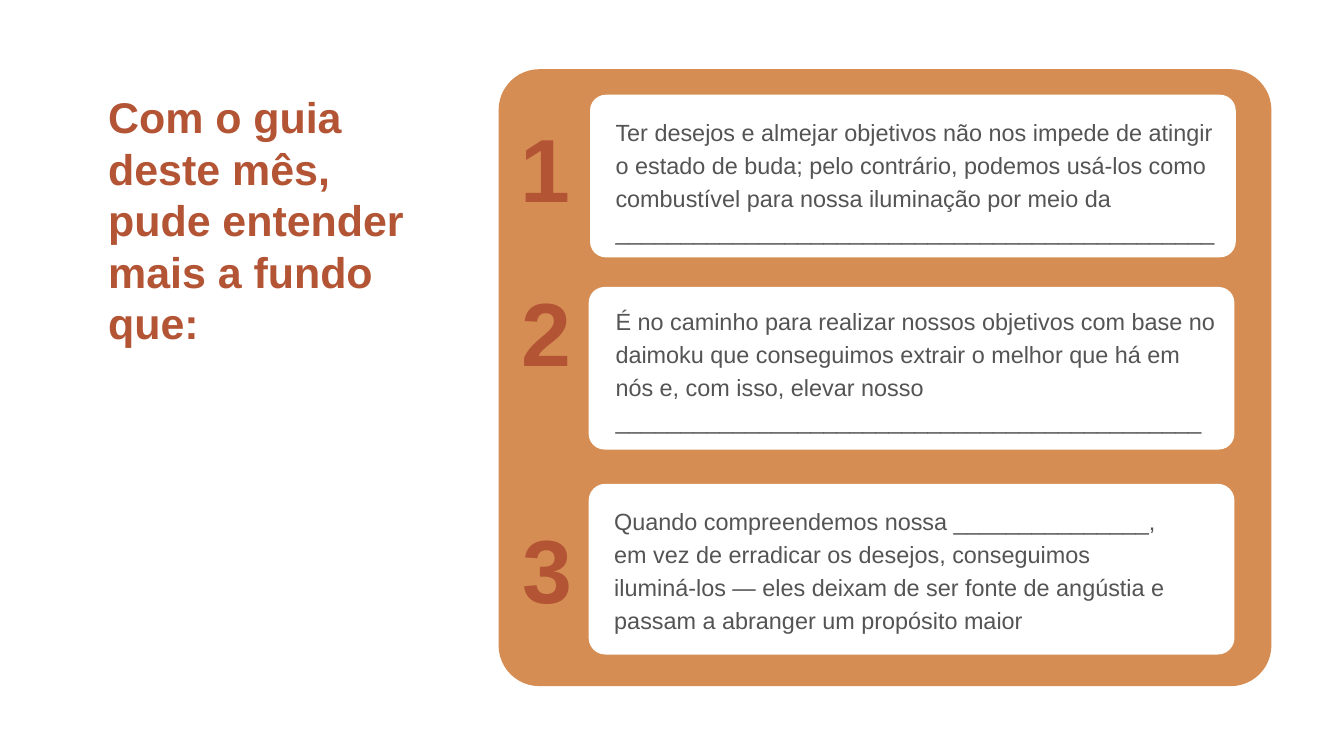
from pptx import Presentation
from pptx.dml.color import RGBColor
from pptx.enum.shapes import MSO_SHAPE
from pptx.enum.text import MSO_ANCHOR, PP_ALIGN
from pptx.util import Inches, Pt

FONT = "Arial"
ORANGE, RUST, GREY, WHITE = "D58D53", "B35435", "545454", "FFFFFF"
PANEL = (7.42, 1.03, 11.5, 9.18)

# number, number position, card box, text box, paragraphs
LESSONS = [
    ("1", (7.75, 1.65), (8.78, 1.41, 9.61, 2.42), (9.16, 1.69, 8.95, 1.92),
     ["Ter desejos e almejar objetivos não nos impede de atingir o estado de buda; "
      "pelo contrário, podemos usá-los como combustível para nossa iluminação "
      "por meio da " + "_" * 46]),
    ("2", (7.76, 4.09), (8.76, 4.27, 9.61, 2.42), (9.16, 4.5, 8.94, 1.92),
     ["É no caminho para realizar nossos objetivos com base no daimoku que "
      "conseguimos extrair o melhor que há em nós e, com isso, elevar nosso",
      "_" * 45]),
    ("3", (7.77, 7.62), (8.76, 7.2, 9.61, 2.54), (9.14, 7.48, 8.19, 1.92),
     ["Quando compreendemos nossa " + "_" * 15 + ", em vez de erradicar os desejos, "
      "conseguimos iluminá-los — eles deixam de ser fonte de angústia e passam "
      "a abranger um propósito maior"]),
]


def color(value):
    return RGBColor.from_string(value)


def place(shape, box):
    shape.left, shape.top, shape.width, shape.height = map(Inches, box)


def write(shape, paragraphs, *, size, fill, leading, bold=False, top_inset=0):
    frame = shape.text_frame
    frame.word_wrap = True
    frame.vertical_anchor = MSO_ANCHOR.TOP
    frame.margin_left = frame.margin_right = frame.margin_bottom = 0
    frame.margin_top = Inches(top_inset)
    frame.text = "\n".join(paragraphs)
    for paragraph in frame.paragraphs:
        paragraph.alignment = PP_ALIGN.LEFT
        paragraph.line_spacing = Pt(leading)
        for run in paragraph.runs:
            run.font.name = FONT
            run.font.size = Pt(size)
            run.font.bold = bold
            run.font.color.rgb = color(fill)


def add_rounded(slide, box, fill, radius):
    panel = slide.shapes.add_shape(MSO_SHAPE.ROUNDED_RECTANGLE, *map(Inches, box))
    panel.adjustments[0] = radius
    panel.shadow.inherit = False
    panel.fill.solid()
    panel.fill.fore_color.rgb = color(fill)
    panel.line.fill.background()


def add_text(slide, box, paragraphs, **style):
    write(slide.shapes.add_textbox(*map(Inches, box)), paragraphs, **style)


def set_heading(slide, box):
    heading = slide.shapes.title
    place(heading, box)
    write(heading, ["Com o guia deste mês,\vpude entender mais a fundo que:"],
          size=46, fill=RUST, leading=55.2, bold=True, top_inset=0.03)


def add_lesson(slide, number, number_at, card_box, text_box, paragraphs):
    add_rounded(slide, card_box, WHITE, 0.097)
    add_text(slide, (*number_at, 0.67, 1.62), [number],
             size=96, fill=RUST, leading=117, bold=True)
    add_text(slide, text_box, paragraphs, size=25.1, fill=GREY, leading=35.2)


def main():
    deck = Presentation()
    deck.slide_width, deck.slide_height = Inches(20), Inches(11.25)
    slide = deck.slides.add_slide(deck.slide_layouts[5])
    slide.background.fill.solid()
    slide.background.fill.fore_color.rgb = color(WHITE)
    set_heading(slide, (1.61, 1.32, 4.78, 3.87))
    add_rounded(slide, PANEL, ORANGE, 0.066)
    for lesson in LESSONS:
        add_lesson(slide, *lesson)
    deck.save("out.pptx")


if __name__ == "__main__":
    main()
